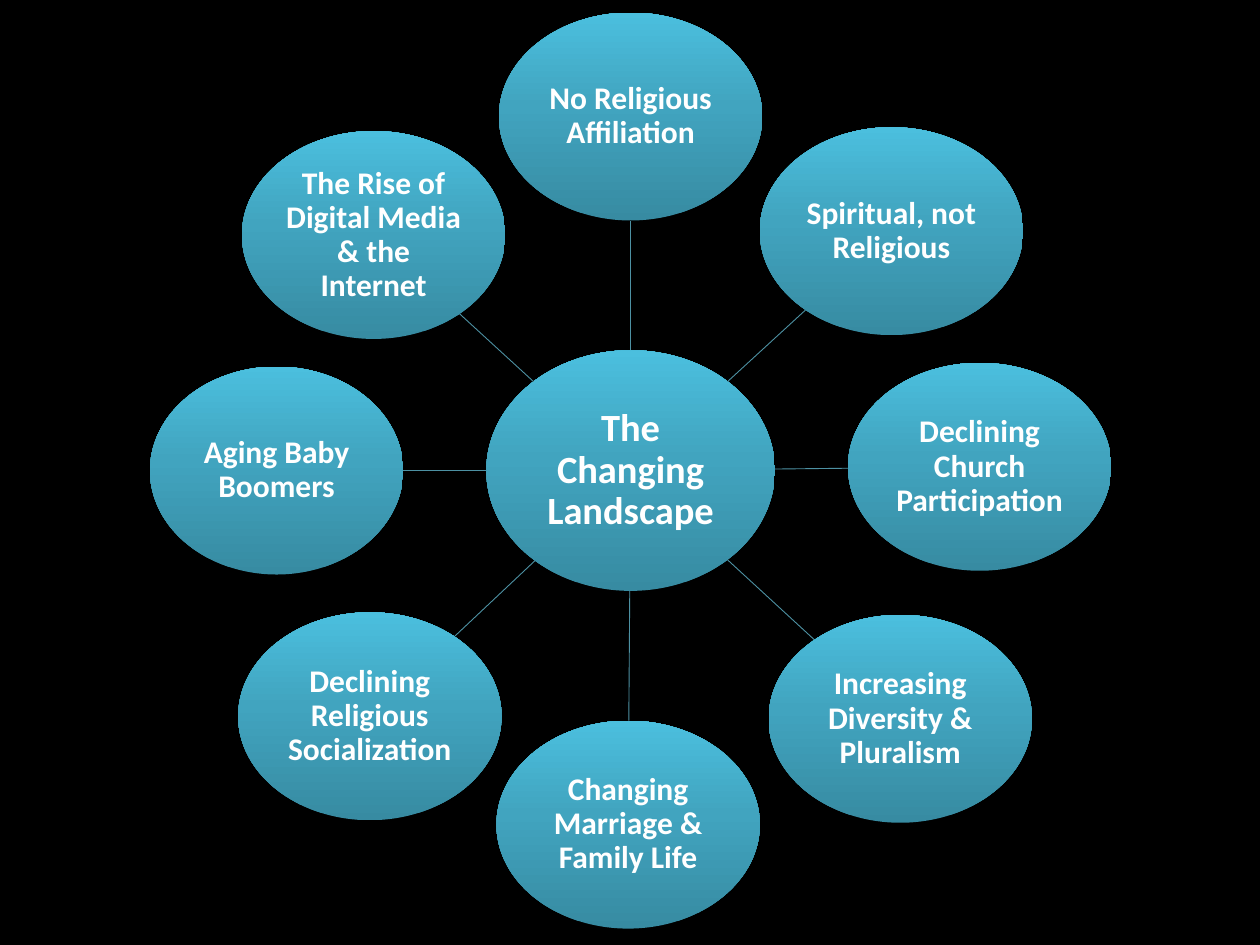
from copy import deepcopy
from math import hypot

from lxml.etree import SubElement
from pptx import Presentation
from pptx.dml.color import RGBColor
from pptx.enum.shapes import MSO_CONNECTOR, MSO_SHAPE
from pptx.enum.text import MSO_ANCHOR, PP_ALIGN
from pptx.oxml.ns import qn
from pptx.util import Inches, Pt

COLORS = {
    "background": "000000",
    "bottom": "378BA2",
    "middle": "41A4BF",
    "top": "4BBFDE",
    "line": "4D91A3",
    "text": "FFFFFF",
}

HUB = ("The Changing Landscape", 3.86, 2.78, 2.29, 1.91)
SPOKES = [
    ("No Religious Affiliation", 3.96, 0.1, 2.09, 1.65),
    ("Spiritual, not Religious", 6.03, 1.01, 2.09, 1.65),
    ("Declining Church Participation", 6.73, 2.88, 2.09, 1.65),
    ("Increasing Diversity & Pluralism", 6.1, 4.88, 2.09, 1.65),
    ("Changing Marriage & Family Life", 3.94, 5.72, 2.09, 1.65),
    ("Declining Religious Socialization", 1.89, 4.86, 2.09, 1.65),
    ("Aging Baby Boomers", 1.19, 2.91, 2.01, 1.65),
    ("The Rise of Digital Media & the Internet", 1.92, 1.04, 2.09, 1.65),
]


def add_ellipse(text, left, top, width, height, size=18, inset=0.01):
    shape = slide.shapes.add_shape(
        MSO_SHAPE.OVAL, Inches(left), Inches(top), Inches(width), Inches(height))
    shape.shadow.inherit = False
    shape.line.fill.background()

    shape.fill.gradient()
    shape.fill.gradient_angle = 90
    first_stop = shape.fill.gradient_stops[0]._gs
    first_stop.addnext(deepcopy(first_stop))
    stops = zip(shape.fill.gradient_stops, (0, 0.55, 1), ("bottom", "middle", "top"))
    for stop, position, color in stops:
        stop.position = position
        stop.color.rgb = RGBColor.from_string(COLORS[color])

    frame = shape.text_frame
    frame.word_wrap = True
    frame.vertical_anchor = MSO_ANCHOR.MIDDLE
    frame.margin_left = frame.margin_right = Inches(inset)
    frame.margin_top = frame.margin_bottom = Inches(inset)
    paragraph = frame.paragraphs[0]
    paragraph.text = text
    paragraph.alignment = PP_ALIGN.CENTER
    paragraph.line_spacing = 0.9
    paragraph.font.name = "Calibri"
    paragraph.font.size = Pt(size)
    paragraph.font.bold = True
    paragraph.font.color.rgb = RGBColor.from_string(COLORS["text"])


def edge_point(ellipse, target):
    """Return where the line from the ellipse's centre to the target's leaves it."""
    (x, y), (target_x, target_y) = [
        (left + width / 2, top + height / 2)
        for _, left, top, width, height in (ellipse, target)]
    _, _, _, width, height = ellipse
    run, rise = target_x - x, target_y - y
    scale = 1 / hypot(run / (width / 2), rise / (height / 2))
    return Inches(x + run * scale), Inches(y + rise * scale)


presentation = Presentation()
presentation.slide_width = Inches(10)
presentation.slide_height = Inches(7.5)
slide = presentation.slides.add_slide(presentation.slide_layouts[6])
slide.background.fill.solid()
slide.background.fill.fore_color.rgb = RGBColor.from_string(COLORS["background"])

add_ellipse(*HUB, size=22, inset=0.02)
for spoke in SPOKES:
    connector = slide.shapes.add_connector(
        MSO_CONNECTOR.STRAIGHT, *edge_point(HUB, spoke), *edge_point(spoke, HUB))
    connector.line.color.rgb = RGBColor.from_string(COLORS["line"])
    connector.line.width = Pt(0.5)
    SubElement(connector._element.spPr, qn("a:effectLst"))
    add_ellipse(*spoke)

presentation.save("out.pptx")
